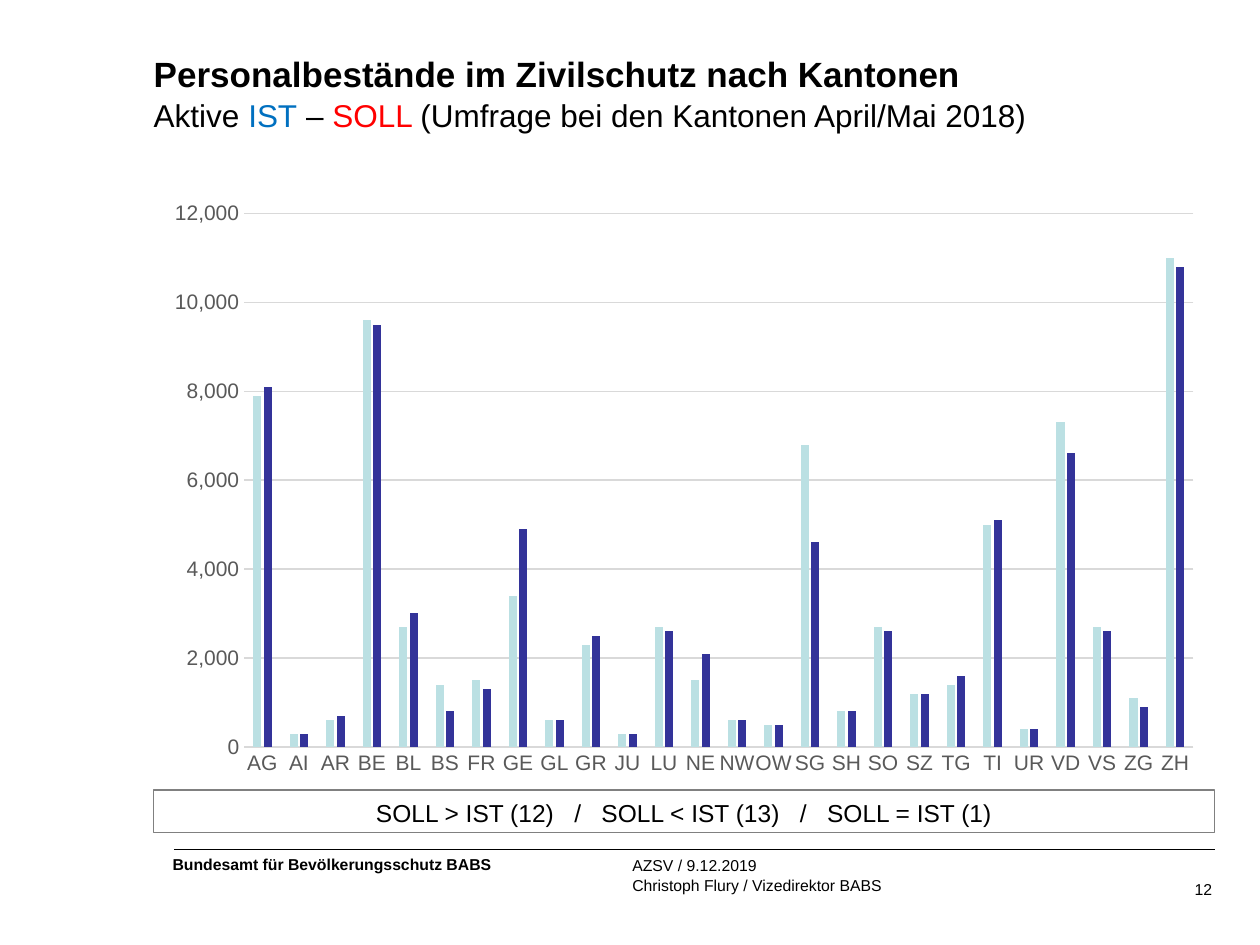
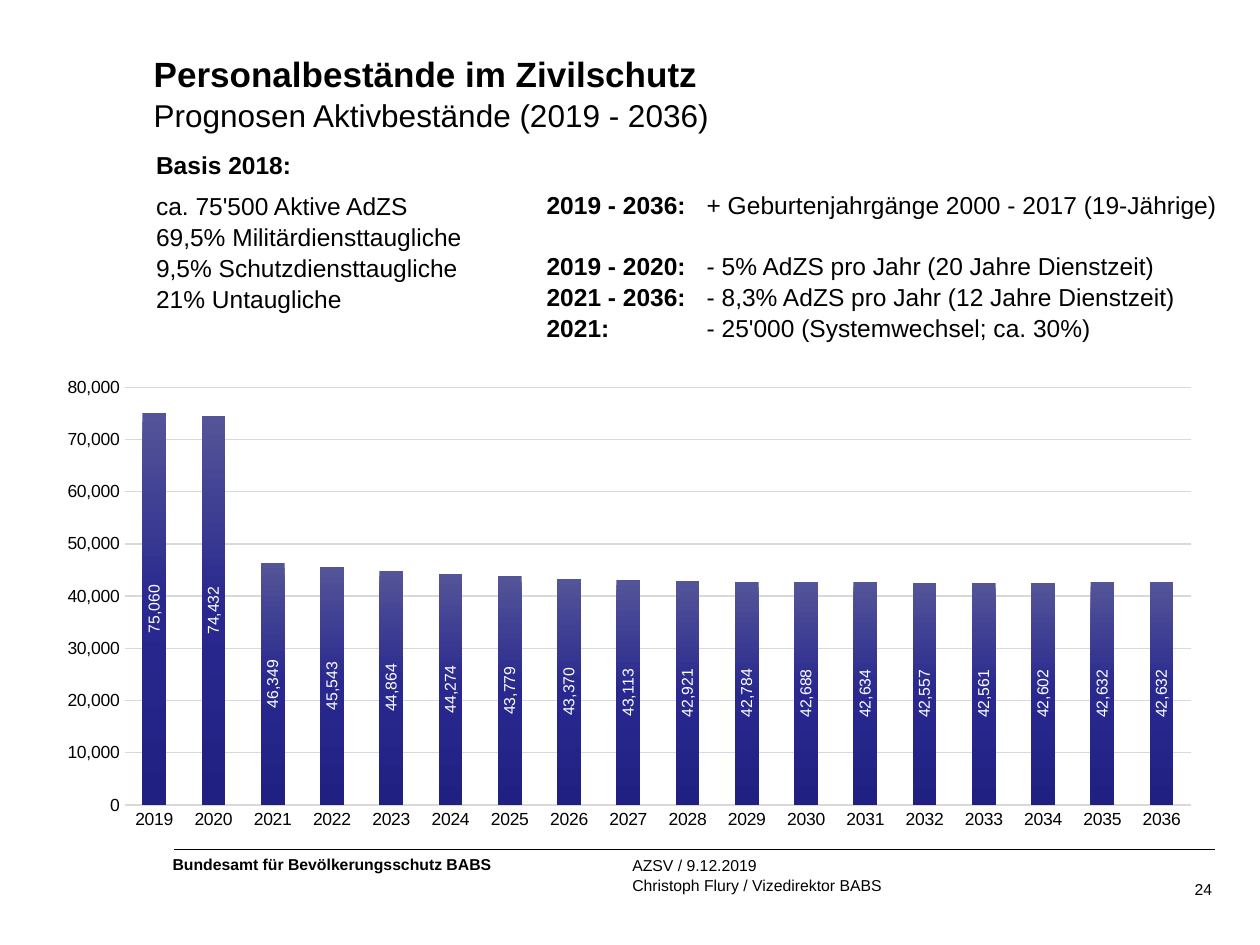
from lxml import etree
from pptx import Presentation
from pptx.chart.data import CategoryChartData
from pptx.dml.color import RGBColor
from pptx.enum.chart import XL_CHART_TYPE, XL_LABEL_POSITION, XL_TICK_MARK
from pptx.enum.shapes import MSO_CONNECTOR, MSO_SHAPE
from pptx.enum.text import MSO_ANCHOR, PP_ALIGN
from pptx.oxml import parse_xml
from pptx.oxml.ns import nsdecls, qn
from pptx.util import Inches, Pt

CLUSTERED, STACKED = XL_CHART_TYPE.COLUMN_CLUSTERED, XL_CHART_TYPE.COLUMN_STACKED
NO_TICK = XL_TICK_MARK.NONE
LABEL_CENTER = XL_LABEL_POSITION.CENTER
STRAIGHT, RECTANGLE = MSO_CONNECTOR.STRAIGHT, MSO_SHAPE.RECTANGLE
TOP, MIDDLE = MSO_ANCHOR.TOP, MSO_ANCHOR.MIDDLE
ALIGN_LEFT, ALIGN_CENTER, ALIGN_RIGHT = PP_ALIGN.LEFT, PP_ALIGN.CENTER, PP_ALIGN.RIGHT

FONT = "Arial"
BLACK = RGBColor(0x00, 0x00, 0x00)
WHITE = RGBColor(0xFF, 0xFF, 0xFF)
IST_BLUE = RGBColor(0x00, 0x70, 0xC0)
SOLL_RED = RGBColor(0xFF, 0x00, 0x00)
PALE_TEAL = RGBColor(0xBB, 0xE0, 0xE3)
INDIGO = RGBColor(0x33, 0x33, 0x99)
AXIS_GREY = RGBColor(0x59, 0x59, 0x59)
GRID_GREY = RGBColor(0xD9, 0xD9, 0xD9)
FRAME_GREY = RGBColor(0x80, 0x80, 0x80)
FORECAST_GRADIENT = [(0, RGBColor(0x54, 0x54, 0x98)), (50, RGBColor(0x28, 0x28, 0x8F)),
                     (100, RGBColor(0x20, 0x20, 0x83))]

# Column and row lines of the page grid, in inches
LEFT, RIGHT = 1.22, 9.64
WIDTH = RIGHT - LEFT
TITLE_TOP, FOOTER_TOP = 0.4, 6.74
INSET_X, INSET_Y = 0.1, 0.05
BODY_SPACING = 1.05


def add_text(shape, paragraphs, size, align=ALIGN_LEFT, spacing=1.0, inset=True, anchor=TOP):
    """Fill a shape with paragraphs, each a list of (text, bold, colour, size) runs.

    Trailing run values may be left out; they default to plain, black and size.
    """
    frame = shape.text_frame
    frame.word_wrap = True
    frame.vertical_anchor = anchor
    frame.margin_left = frame.margin_right = Inches(INSET_X if inset else 0)
    frame.margin_top = frame.margin_bottom = Inches(INSET_Y if inset else 0)
    for index, runs in enumerate(paragraphs):
        paragraph = frame.add_paragraph() if index else frame.paragraphs[0]
        paragraph.alignment = align
        paragraph.line_spacing = spacing
        for text, *style in runs:
            bold, colour, run_size = style + [False, BLACK, size][len(style):]
            run = paragraph.add_run()
            run.text = text
            run.font.name = FONT
            run.font.size = Pt(run_size)
            run.font.bold = bold
            run.font.color.rgb = colour
    return frame


def add_columns(slide, kind, box, categories, series, axis_size, axis_colour, top, step, gap, overlap):
    data = CategoryChartData(number_format="#,##0")
    data.categories = categories
    for name, values in series:
        data.add_series(name, values)
    chart = slide.shapes.add_chart(kind, *map(Inches, box), data).chart
    chart.has_legend = chart.has_title = False
    chart.font.name = FONT
    chart.font.size = Pt(10)
    chart.font.color.rgb = BLACK
    for axis in (chart.category_axis, chart.value_axis):
        axis.major_tick_mark = axis.minor_tick_mark = NO_TICK
        font = axis.tick_labels.font
        font.name, font.size, font.color.rgb = FONT, Pt(axis_size), axis_colour
        axis._element.find(qn("c:txPr")).find(qn("a:bodyPr")).set("rot", "-60000000")
    values_axis = chart.value_axis
    values_axis.minimum_scale, values_axis.maximum_scale, values_axis.major_unit = 0, top, step
    values_axis.tick_labels.number_format = "#,##0"
    values_axis.tick_labels.number_format_is_linked = False
    values_axis.format.line.fill.background()
    for line in (chart.category_axis.format.line, values_axis.major_gridlines.format.line):
        line.color.rgb = GRID_GREY
        line.width = Pt(0.75)
    plot = chart.plots[0]
    plot.gap_width, plot.overlap = gap, overlap
    plot.vary_by_categories = False
    return plot


prs = Presentation()
prs.slide_width, prs.slide_height = Inches(10), Inches(7.5)

# Title and footer of both slides
pages = [
    (12, "Personalbestände im Zivilschutz nach Kantonen",
     [("Aktive ",), ("IST", False, IST_BLUE), (" – ",), ("SOLL ", False, SOLL_RED),
      ("(Umfrage bei den Kantonen April/Mai 2018)",)]),
    (24, "Personalbestände im Zivilschutz", [("Prognosen Aktivbestände (2019 - 2036)",)]),
]
slides = []
for number, title, subtitle in pages:
    slide = prs.slides.add_slide(prs.slide_layouts[6])
    slides.append(slide)

    heading = slide.shapes.add_textbox(Inches(LEFT), Inches(TITLE_TOP), Inches(WIDTH), Inches(0.7))
    add_text(heading, [[(title, True, BLACK, 20)], subtitle], 18, spacing=BODY_SPACING, inset=False)

    rule = slide.shapes.add_connector(STRAIGHT, Inches(1.38), Inches(FOOTER_TOP),
                                      Inches(RIGHT), Inches(FOOTER_TOP))
    rule.line.color.rgb = BLACK
    rule.line.width = Pt(0.75)
    etree.SubElement(rule._element.spPr, qn("a:effectLst"))

    office = slide.shapes.add_textbox(Inches(1.37), Inches(FOOTER_TOP + 0.01), Inches(3), Inches(0.21))
    add_text(office, [[("Bundesamt für Bevölkerungsschutz BABS", True)]], 9, inset=False, anchor=MIDDLE)

    for row, line in enumerate(["AZSV / 9.12.2019", "Christoph Flury / Vizedirektor BABS"]):
        event = slide.shapes.add_textbox(Inches(4.92), Inches(FOOTER_TOP + 0.16 * row),
                                         Inches(RIGHT - 4.92), Inches(0.24))
        add_text(event, [[(line,)]], 9)

    page_number = slide.shapes.add_textbox(Inches(9.12), Inches(6.98), Inches(0.5), Inches(0.15))
    add_text(page_number, [[(str(number),)]], 9, align=ALIGN_RIGHT, inset=False)

cantons_slide, forecast_slide = slides

# Actual and target staff by canton
cantons = ("AG AI AR BE BL BS FR GE GL GR JU LU NE NW OW SG SH SO SZ TG TI UR VD VS ZG ZH").split()
ist = [7900, 300, 600, 9600, 2700, 1400, 1500, 3400, 600, 2300, 300, 2700, 1500,
       600, 500, 6800, 800, 2700, 1200, 1400, 5000, 400, 7300, 2700, 1100, 11000]
soll = [8100, 300, 700, 9500, 3000, 800, 1300, 4900, 600, 2500, 300, 2600, 2100,
        600, 500, 4600, 800, 2600, 1200, 1600, 5100, 400, 6600, 2600, 900, 10800]
canton_plot = add_columns(cantons_slide, CLUSTERED, (LEFT, 1.51, WIDTH, 4.73), cantons,
                          [("IST", ist), ("SOLL", soll)], 12, AXIS_GREY, 12000, 2000, 219, -27)
for bars, colour in zip(canton_plot.series, (PALE_TEAL, INDIGO)):
    bars.format.fill.solid()
    bars.format.fill.fore_color.rgb = colour

summary = cantons_slide.shapes.add_shape(RECTANGLE, Inches(LEFT), Inches(6.27), Inches(WIDTH), Inches(0.34))
summary.shadow.inherit = False
summary.fill.background()
summary.line.color.rgb = FRAME_GREY
summary.line.width = Pt(0.75)
add_text(summary, [[("SOLL > IST (12)   /   SOLL < IST (13)   /   SOLL = IST (1)",)]], 14,
         align=ALIGN_CENTER, spacing=BODY_SPACING)

# Assumptions behind the forecast
basis = forecast_slide.shapes.add_textbox(Inches(1.14), Inches(1.13), Inches(2.9), Inches(1.36))
basis_frame = add_text(basis, [
    [("Basis 2018:", True)], [("ca. 75'500 Aktive AdZS",)], [("69,5% Militärdiensttaugliche",)],
    [("9,5% Schutzdiensttaugliche",)], [("21% Untaugliche",)],
], 14, spacing=BODY_SPACING)
basis_frame.paragraphs[0].space_after = Pt(6)

changes = [
    ("2019 - 2036:", "+ Geburtenjahrgänge 2000 - 2017 (19-Jährige)"),
    ("2019 - 2020:", "- 5% AdZS pro Jahr (20 Jahre Dienstzeit)"),
    ("2021 - 2036:", "- 8,3% AdZS pro Jahr (12 Jahre Dienstzeit)"),
    ("2021:", "- 25'000 (Systemwechsel; ca. 30%)"),
]
changes_box = forecast_slide.shapes.add_textbox(Inches(4.24), Inches(1.45), Inches(5.7), Inches(1.28))
changes_frame = add_text(changes_box, [[(period, True), ("\t" + change,)] for period, change in changes],
                         14, spacing=BODY_SPACING)
changes_frame.paragraphs[1].space_before = Pt(17)
for paragraph in changes_frame.paragraphs:
    tabs = etree.SubElement(paragraph._p.get_or_add_pPr(), qn("a:tabLst"))
    etree.SubElement(tabs, qn("a:tab"), pos=str(Inches(1.27)), algn="l")

# Forecast of active staff by year
years = [str(year) for year in range(2019, 2037)]
active = [75060, 74432, 46349, 45543, 44864, 44274, 43779, 43370, 43113,
          42921, 42784, 42688, 42634, 42557, 42561, 42602, 42632, 42632]
forecast_plot = add_columns(forecast_slide, STACKED, (0.35, 2.92, RIGHT - 0.35, 3.74), years,
                            [("Aktive", active)], 10, BLACK, 80000, 10000, 150, 100)
stops = "".join(f'<a:gs pos="{share * 1000}"><a:srgbClr val="{colour}"/></a:gs>'
                for share, colour in FORECAST_GRADIENT)
gradient = parse_xml(f'<a:gradFill {nsdecls("a")} rotWithShape="1"><a:gsLst>{stops}</a:gsLst>'
                     '<a:lin ang="5400000" scaled="0"/></a:gradFill>')
forecast_plot.series[0]._element.get_or_add_spPr().insert(0, gradient)

labels = forecast_plot.series[0].data_labels
labels.show_value = True
labels.position = LABEL_CENTER
labels.number_format, labels.number_format_is_linked = "#,##0", False
labels.font.name, labels.font.size, labels.font.color.rgb = FONT, Pt(9), WHITE
label_body = labels._element.find(qn("c:txPr")).find(qn("a:bodyPr"))
label_body.set("rot", "-5400000")
label_body.set("vert", "horz")

prs.save("out.pptx")
